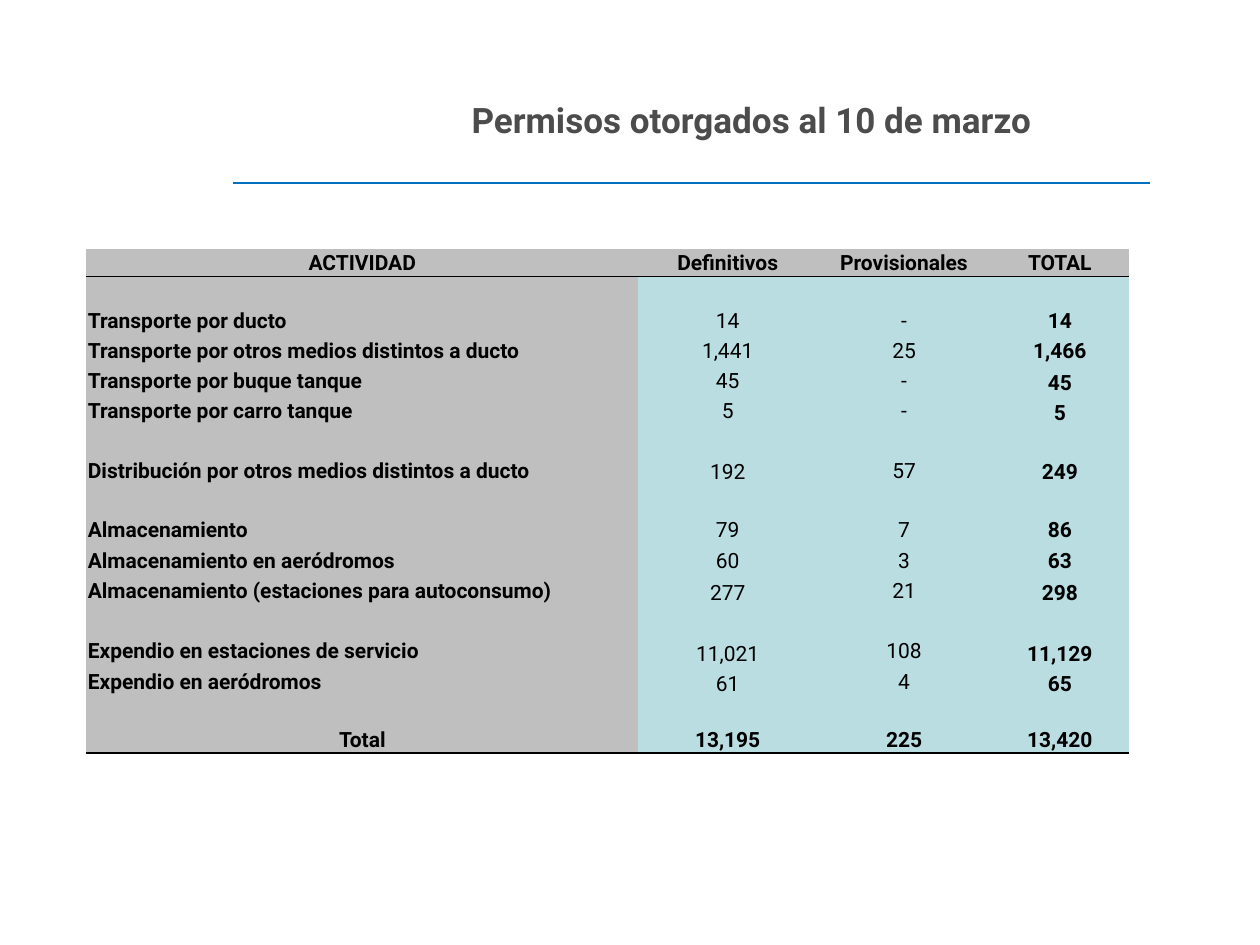
from lxml import etree
from pptx import Presentation
from pptx import util as u
from pptx.dml.color import RGBColor
from pptx.enum import shapes, text
from pptx.oxml.ns import qn

FONT = "Roboto"
BLACK = RGBColor(0, 0, 0)
DARK = RGBColor(0x4C, 0x4C, 0x4C)
GREY = RGBColor(0xBF, 0xBF, 0xBF)
AQUA = RGBColor(0xBA, 0xDD, 0xE1)
BLUE = RGBColor(0x00, 0x70, 0xC0)

BLANK = ("", "", "", "")
ROWS = [
    ("ACTIVIDAD", "Definitivos", "Provisionales", "TOTAL"),
    BLANK,
    ("Transporte por ducto", "14", "-", "14"),
    ("Transporte por otros medios distintos a ducto", "1,441", "25", "1,466"),
    ("Transporte por buque tanque", "45", "-", "45"),
    ("Transporte por carro tanque", "5", "-", "5"),
    BLANK,
    ("Distribución por otros medios distintos a ducto", "192", "57", "249"),
    BLANK,
    ("Almacenamiento", "79", "7", "86"),
    ("Almacenamiento en aeródromos", "60", "3", "63"),
    ("Almacenamiento (estaciones para autoconsumo)", "277", "21", "298"),
    BLANK,
    ("Expendio en estaciones de servicio", "11,021", "108", "11,129"),
    ("Expendio en aeródromos", "61", "4", "65"),
    BLANK,
    ("Total", "13,195", "225", "13,420"),
]
LAST = len(ROWS) - 1
COL_WIDTHS = (11.13, 3.6, 3.51, 2.77)
SHORT_ROWS = {0, 1, 7, 15, 16}
BOTTOM_ROWS = {0: {LAST}, 1: {7, 11, 13, 14, LAST}, 2: {LAST},
               3: {4, 5, 7, 11, 13, 14, LAST}}


def write(tf, content, size=12, color=BLACK, bold=False, align=text.PP_ALIGN.CENTER):
    """Fill the first paragraph of a text frame."""
    p = tf.paragraphs[0]
    p.alignment = align
    if not content:
        p._p.get_or_add_endParaRPr().set("sz", str(size * 100))
        return
    r = p.add_run()
    r.text = content
    r.font.name = FONT
    r.font.size = u.Pt(size)
    r.font.bold = bold
    r.font.color.rgb = color


def set_borders(cell, ruled):
    """Draw the sides named in ruled and clear the others."""
    tcPr = cell._tc.get_or_add_tcPr()
    for side in "LRTB":
        ln = etree.SubElement(tcPr, qn(f"a:ln{side}"), w=str(u.Pt(1)))
        if side in ruled:
            fill = etree.SubElement(ln, qn("a:solidFill"))
            etree.SubElement(fill, qn("a:srgbClr"), val=str(BLACK))
        else:
            etree.SubElement(ln, qn("a:noFill"))


def add_title(slide, left, top, width, height):
    """Place the centred heading in its box."""
    tf = slide.shapes.add_textbox(left, top, width, height).text_frame
    tf.word_wrap = True
    tf.vertical_anchor = text.MSO_ANCHOR.MIDDLE
    write(tf, "Permisos otorgados al 10 de marzo", size=20, color=DARK, bold=True)


def add_rule(slide, left, top, width):
    """Place the blue line under the heading."""
    line = slide.shapes.add_connector(
        shapes.MSO_CONNECTOR.STRAIGHT, left, top, left + width, top)
    line.line.color.rgb = BLUE
    line.line.width = u.Pt(1.5)
    etree.SubElement(line._element.spPr, qn("a:effectLst"))


def fill_cell(cell, row, col):
    """Format one permit cell by its place in the table."""
    heading = row == 0 or col == 0
    ruled = {0: "B", 1: "T", LAST: "B"}.get(row, "")
    set_borders(cell, ruled)
    cell.fill.solid()
    cell.fill.fore_color.rgb = GREY if heading else AQUA
    cell.margin_left = cell.margin_right = cell.margin_top = u.Cm(0.03)
    cell.margin_bottom = 0
    bottom = row in BOTTOM_ROWS[col]
    cell.vertical_anchor = text.MSO_ANCHOR.BOTTOM if bottom else text.MSO_ANCHOR.MIDDLE
    left_aligned = col == 0 and row not in (0, LAST)
    write(cell.text_frame, ROWS[row][col],
          bold=heading or col == 3 or row == LAST,
          align=text.PP_ALIGN.LEFT if left_aligned else text.PP_ALIGN.CENTER)


def add_permits(slide, left, top, width, height):
    """Place the table of permits by activity."""
    table = slide.shapes.add_table(
        len(ROWS), len(COL_WIDTHS), left, top, width, height).table
    table.first_row = table.horz_banding = False
    for column, size in zip(table.columns, COL_WIDTHS):
        column.width = u.Cm(size)
    for i, row in enumerate(table.rows):
        row.height = u.Cm(0.57 if i in SHORT_ROWS else 0.61)
        for j, cell in enumerate(row.cells):
            fill_cell(cell, i, j)


def main():
    """Build the slide and save it."""
    prs = Presentation()
    prs.slide_width, prs.slide_height = u.Cm(25.4), u.Cm(19.05)
    slide = prs.slides.add_slide(prs.slide_layouts[6])
    add_title(slide, u.Cm(4.9), u.Cm(0.81), u.Cm(20.5), u.Cm(3.18))
    add_permits(slide, u.Cm(1.74), u.Cm(5.01), u.Cm(21.01), u.Cm(10.17))
    add_rule(slide, u.Cm(4.69), u.Cm(3.69), u.Cm(18.5))
    prs.save("out.pptx")


if __name__ == "__main__":
    main()
